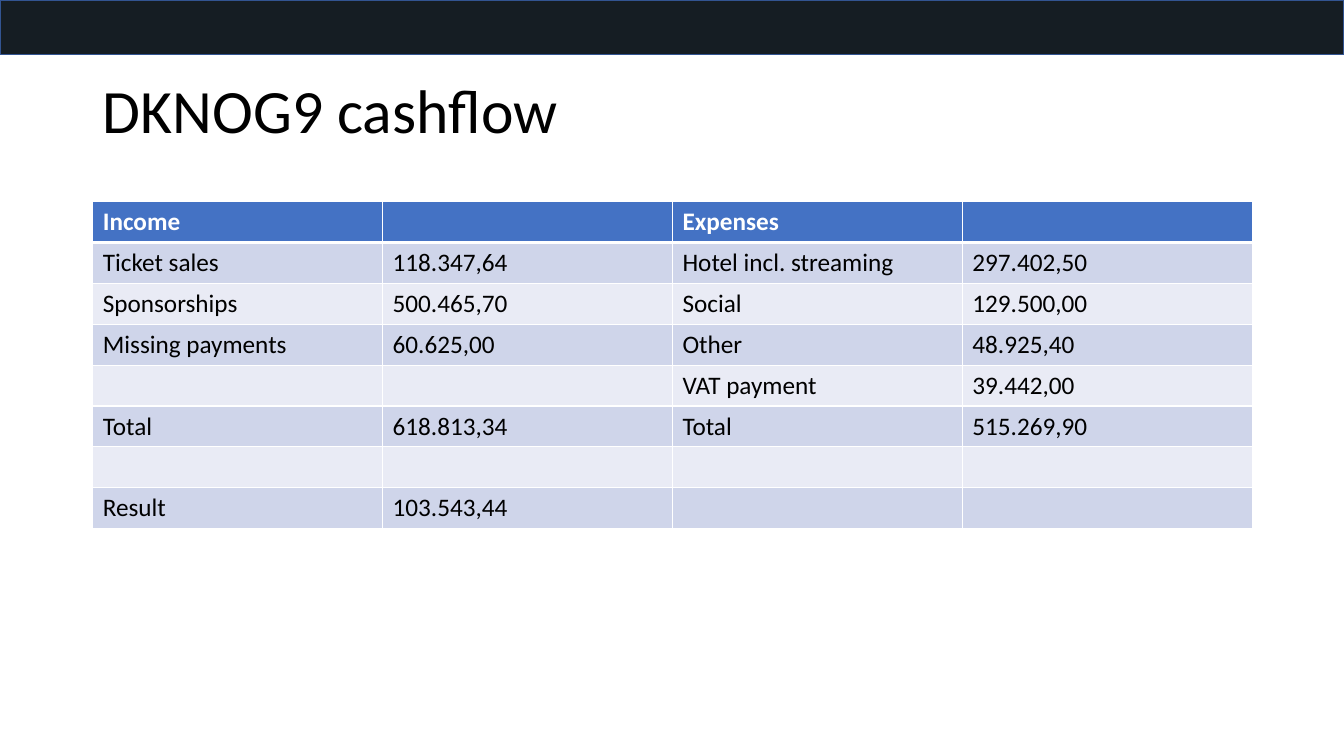
"""Build the DKNOG9 cashflow slide."""
from lxml.etree import SubElement
from pptx import Presentation
from pptx.dml.color import RGBColor
from pptx.enum.shapes import MSO_SHAPE
from pptx.enum.text import MSO_ANCHOR, PP_ALIGN
from pptx.oxml.ns import qn
from pptx.util import Inches, Pt

HEADING = "DKNOG9 cashflow"
CASHFLOW = [
    ("Income", "", "Expenses", ""),
    ("Ticket sales", "118.347,64", "Hotel incl. streaming", "297.402,50"),
    ("Sponsorships", "500.465,70", "Social", "129.500,00"),
    ("Missing payments", "60.625,00", "Other", "48.925,40"),
    ("", "", "VAT payment", "39.442,00"),
    ("Total", "618.813,34", "Total", "515.269,90"),
    ("", "", "", ""),
    ("Result", "103.543,44", "", ""),
]
COLORS = {
    "bar": "151D23", "bar_line": "325491", "header": "4472C4",
    "odd": "CFD5EA", "even": "E9EBF5", "white": "FFFFFF", "black": "000000",
}
FONT = "Calibri"
SLIDE_WIDTH, SLIDE_HEIGHT = 13.33, 7.5
LEFT, WIDTH = 0.92, 11.5
TABLE_TOP, TABLE_HEIGHT = 2, 3.24


def color(name):
    return RGBColor.from_string(COLORS[name])


def style_font(font, size, color_name, bold=False):
    font.name = FONT
    font.size = Pt(size)
    font.bold = bold
    font.color.rgb = color(color_name)


def add_borders(cell, widths):
    properties = cell._tc.get_or_add_tcPr()
    for position, (side, points) in enumerate(widths.items()):
        line = SubElement(properties, qn(f"a:ln{side}"), w=str(Pt(points)))
        fill = SubElement(line, qn("a:solidFill"))
        SubElement(fill, qn("a:srgbClr"), val=COLORS["white"])
        properties.insert(position, line)


def add_bar(slide):
    bar = slide.shapes.add_shape(
        MSO_SHAPE.RECTANGLE, 0, 0, Inches(SLIDE_WIDTH), Inches(0.54))
    bar.shadow.inherit = False
    bar.fill.solid()
    bar.fill.fore_color.rgb = color("bar")
    bar.line.color.rgb = color("bar_line")
    bar.line.width = Pt(1)
    slide.shapes._spTree.insert(2, bar._element)


def add_heading(slide):
    heading = slide.shapes.title
    heading.left, heading.top = Inches(LEFT), Inches(0.4)
    heading.width, heading.height = Inches(WIDTH), Inches(1.45)
    frame = heading.text_frame
    frame.text = HEADING
    frame.word_wrap = True
    frame.vertical_anchor = MSO_ANCHOR.MIDDLE
    paragraph = frame.paragraphs[0]
    paragraph.alignment = PP_ALIGN.LEFT
    paragraph.line_spacing = 0.9
    style_font(paragraph.runs[0].font, 44, "black")


def add_cashflow(slide):
    table = slide.shapes.add_table(
        len(CASHFLOW), len(CASHFLOW[0]), Inches(LEFT), Inches(TABLE_TOP),
        Inches(WIDTH), Inches(TABLE_HEIGHT)).table
    for row, entries in enumerate(CASHFLOW):
        is_header = row == 0
        band = "header" if is_header else "odd" if row % 2 else "even"
        borders = {"L": 1, "R": 1, "T": 3 if row == 1 else 1,
                   "B": 3 if is_header else 1}
        for column, entry in enumerate(entries):
            cell = table.cell(row, column)
            cell.text = entry
            cell.fill.solid()
            cell.fill.fore_color.rgb = color(band)
            add_borders(cell, borders)
            paragraph = cell.text_frame.paragraphs[0]
            for target in (paragraph, *paragraph.runs):
                style_font(target.font, 18,
                           "white" if is_header else "black", is_header)


def main():
    deck = Presentation()
    deck.slide_width = Inches(SLIDE_WIDTH)
    deck.slide_height = Inches(SLIDE_HEIGHT)
    slide = deck.slides.add_slide(deck.slide_layouts[5])
    add_bar(slide)
    add_heading(slide)
    add_cashflow(slide)
    deck.save("out.pptx")


if __name__ == "__main__":
    main()
